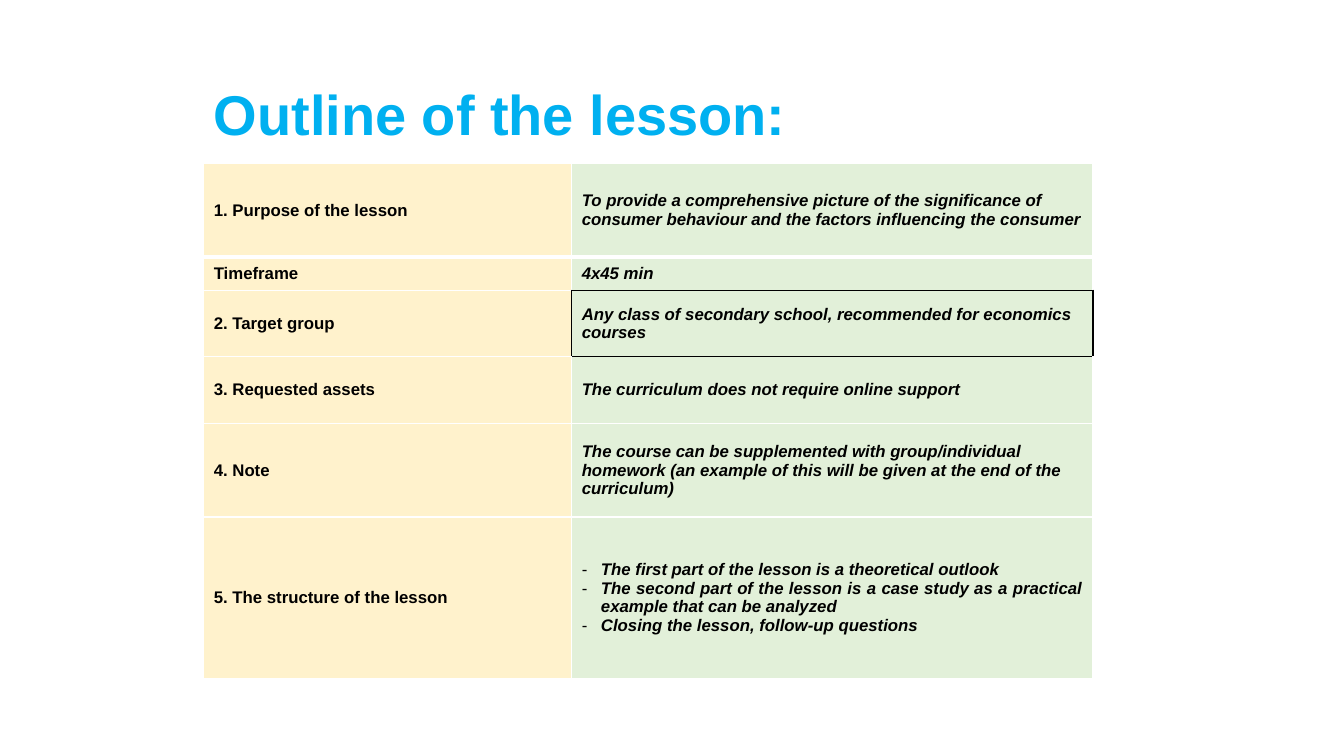
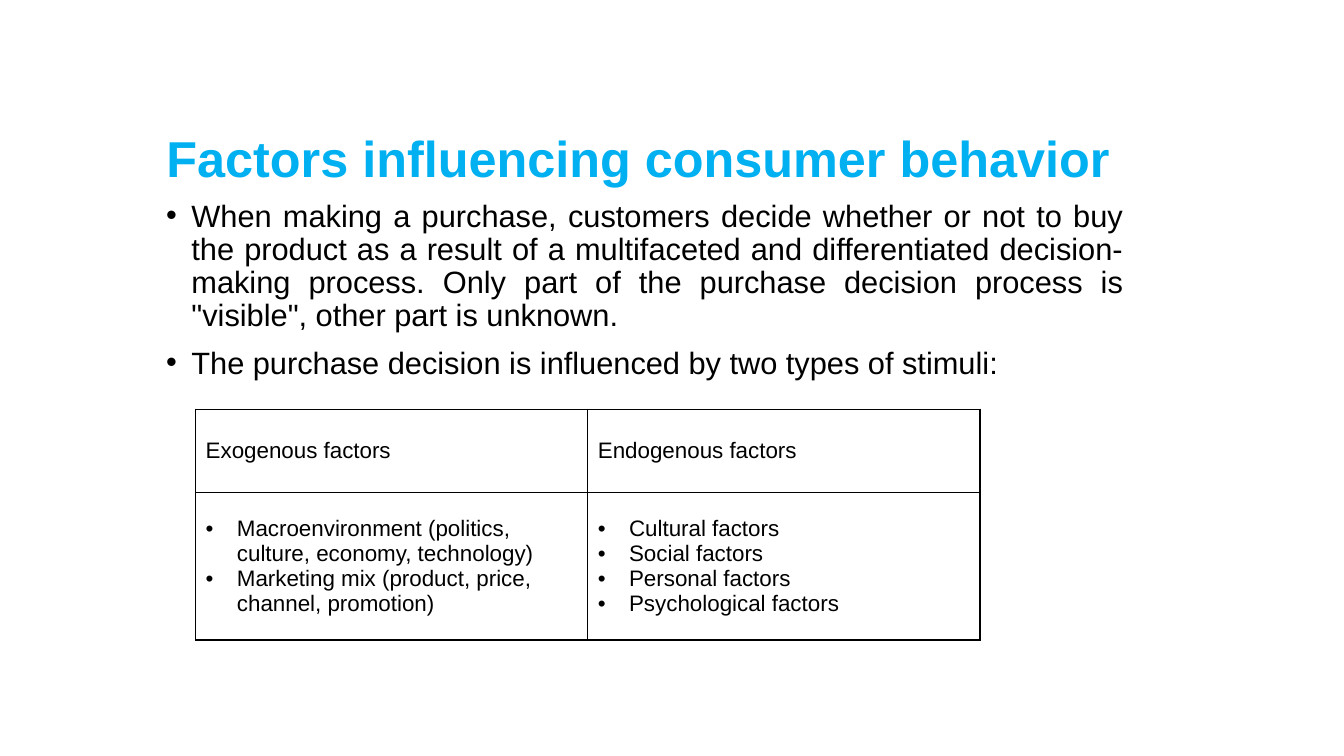
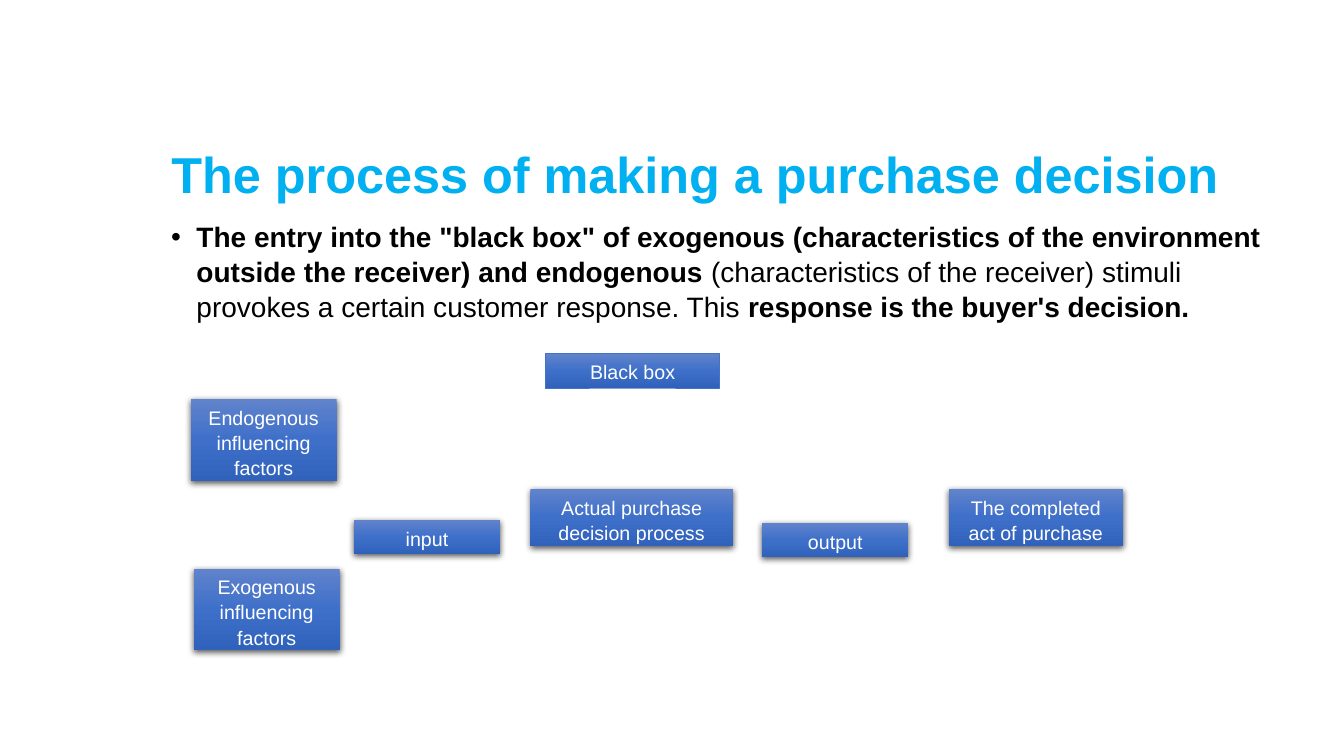
import pptx
import pptx.util
import pptx.dml.color
import pptx.enum.text
import pptx.enum.shapes
import pptx.oxml
import pptx.oxml.ns

Inches = pptx.util.Inches
Pt = pptx.util.Pt
ALIGN = pptx.enum.text.PP_ALIGN
ANCHOR = pptx.enum.text.MSO_ANCHOR
RECT = pptx.enum.shapes.MSO_SHAPE.RECTANGLE

HEX = {"title": "00B0F0", "text": "000000", "white": "FFFFFF",
       "label": "FFF2CC", "detail": "E2F0D9", "line": "4472C4"}
RAMP = [(0, "6183CB"), (50, "3E70CA"), (100, "3062BB")]
FONT = "Arial"

PLAN = [
    ("1. Purpose of the lesson", 0.93,
     ["To provide a comprehensive picture of the significance of consumer behaviour and the factors influencing the consumer"]),
    ("Timeframe", 0.33, ["4x45 min"]),
    ("2. Target group", 0.66,
     ["Any class of secondary school, recommended for economics courses"]),
    ("3. Requested assets", 0.66,
     ["The curriculum does not require online support"]),
    ("4. Note", 0.93,
     ["The course can be supplemented with group/individual homework (an example of this will be given at the end of the curriculum)"]),
    ("5. The structure of the lesson", 1.6,
     ["The first part of the lesson is a theoretical outlook",
      "The second part of the lesson is a case study as a practical example that can be analyzed",
      "Closing the lesson, follow-up questions"]),
]
FRAMED = (2, 1)

STIMULI = [
    "When making a purchase, customers decide whether or not to buy the product as a result of a multifaceted and differentiated decision-making process. Only part of the purchase decision process is \"visible\", other part is unknown.",
    "The purchase decision is influenced by two types of stimuli:",
]
FACTORS = [
    ("Exogenous factors",
     ["Macroenvironment (politics, culture, economy, technology)",
      "Marketing mix (product, price, channel, promotion)"]),
    ("Endogenous factors",
     ["Cultural factors", "Social factors", "Personal factors",
      "Psychological factors"]),
]

ENTRY = [
    ("The entry into the \"black box\" of exogenous (characteristics of the environment outside the receiver) and endogenous ", True),
    ("(characteristics of the receiver) stimuli provokes a certain customer response. This ", False),
    ("response is the buyer's decision.", True),
]
STEPS = [
    ("Endogenous influencing factors", 1.89, 3.96, 1.45, 0.81),
    ("Exogenous influencing factors", 1.92, 5.64, 1.45, 0.81),
    ("input", 3.51, 5.16, 1.45, 0.34),
    ("Actual purchase decision process", 5.26, 4.85, 2.01, 0.57),
    ("output", 7.56, 5.19, 1.45, 0.34),
    ("The completed act of purchase", 9.41, 4.85, 1.73, 0.57),
    ("Black box", 5.41, 3.51, 1.73, 0.34),
]


def rgb(name):
    return pptx.dml.color.RGBColor.from_string(HEX[name])


def put(item, **vals):
    for key, val in vals.items():
        setattr(item, key, val)


def node(body):
    start, rest = body.split(" ", 1)
    return pptx.oxml.parse_xml(f"<a:{start} {pptx.oxml.ns.nsdecls('a')} {rest}")


def write(frame, paras, size, color="text", bullet=None, indent=0, form=None, **font):
    for i, runs in enumerate(paras):
        para = frame.paragraphs[0] if i == 0 else frame.add_paragraph()
        if bullet:
            props = para._p.get_or_add_pPr()
            step = Inches(indent)
            props.set("marL", str(step))
            props.set("indent", str(-step))
            props.append(node(f'buFont typeface="{FONT}"/>'))
            props.append(node(f'buChar char="{bullet}"/>'))
        put(para, **(form or {}))
        for text, bold in [(runs, False)] if isinstance(runs, str) else runs:
            run = para.add_run()
            run.text = text
            put(run.font, **{"name": FONT, "size": Pt(size), "bold": bold, **font})
            run.font.color.rgb = rgb(color)


def start(deck, text, left, top, width, height, size=36, anchor=ANCHOR.TOP):
    slide = deck.slides.add_slide(deck.slide_layouts[5])
    title = slide.shapes.title
    put(title, left=Inches(left), top=Inches(top),
        width=Inches(width), height=Inches(height))
    put(title.text_frame, word_wrap=True, vertical_anchor=anchor,
        auto_size=pptx.enum.text.MSO_AUTO_SIZE.NONE)
    write(title.text_frame, [text], size, "title", bold=True,
          form={"alignment": ALIGN.LEFT, "line_spacing": 0.9})
    return slide


def prose(slide, paras, size, left, top, width, height, form):
    box = slide.shapes.add_textbox(*map(Inches, (left, top, width, height)))
    box.text_frame.word_wrap = True
    write(box.text_frame, paras, size, bullet="•", indent=0.25, form=form)
    for para in box.text_frame.paragraphs[1:]:
        para.space_before = Pt(10)


def grid(slide, left, top, cols, rows):
    area = map(Inches, (left, top, sum(cols), sum(rows)))
    table = slide.shapes.add_table(len(rows), len(cols), *area).table
    put(table, first_row=False, horz_banding=False)
    for col, width in zip(table.columns, cols):
        col.width = Inches(width)
    for row, height in zip(table.rows, rows):
        row.height = Inches(height)
    return table


def edge(cell, side, color, width=1):
    cell._tc.get_or_add_tcPr().append(node(
        f'ln{side} w="{Pt(width)}"><a:solidFill><a:srgbClr val="{HEX[color]}"/>'
        f'</a:solidFill></a:ln{side}>'))


def outline(deck):
    slide = start(deck, "Outline of the lesson:", 2.02, 0.89, 8.19, 0.55,
                  40, ANCHOR.MIDDLE)
    table = grid(slide, 2.02, 1.62, [3.65, 5.17], [row[1] for row in PLAN])
    near = {"L": (0, -1), "R": (0, 1), "T": (-1, 0), "B": (1, 0)}
    for r, (label, _, detail) in enumerate(PLAN):
        for c, paras in enumerate(([label], detail)):
            cell = table.cell(r, c)
            cell.vertical_anchor = ANCHOR.MIDDLE
            for side, (down, over) in near.items():
                dark = FRAMED in ((r, c), (r + down, c + over))
                edge(cell, side, "text" if dark else "white",
                     3 if (r, side) == (0, "B") else 1)
            cell.fill.solid()
            cell.fill.fore_color.rgb = rgb(("label", "detail")[c])
            many = len(paras) > 1
            write(cell.text_frame, paras, 12, bullet="-" if many else None,
                  indent=0.19, bold=True, italic=c == 1,
                  form={"alignment": ALIGN.JUSTIFY if many else ALIGN.LEFT})


def factors(deck):
    slide = start(deck, "Factors influencing consumer behavior",
                  1.55, 1.28, 9.69, 0.62)
    prose(slide, STIMULI, 22, 1.55, 1.94, 9.69, 2,
          {"alignment": ALIGN.JUSTIFY, "line_spacing": 0.9})
    table = grid(slide, 1.94, 4.06, [3.89, 3.89], [0.83, 1.46])
    for c, (head, items) in enumerate(FACTORS):
        for r, paras in enumerate(([head], items)):
            cell = table.cell(r, c)
            cell.vertical_anchor = ANCHOR.MIDDLE
            for side in "LRTB":
                edge(cell, side, "text")
            cell.fill.background()
            write(cell.text_frame, paras, 16, bullet="•" if r else None, indent=0.31)


def process(deck):
    slide = start(deck, "The process of making a purchase decision",
                  1.6, 1.44, 11.05, 0.62)
    prose(slide, [ENTRY], 20, 1.6, 2.12, 11.05, 1.15, {"line_spacing": 1.04})
    stops = "".join(f'<a:gs pos="{at * 1000}"><a:srgbClr val="{tint}"/></a:gs>'
                    for at, tint in RAMP)
    for text, *area in STEPS:
        box = slide.shapes.add_shape(RECT, *map(Inches, area))
        box.shadow.inherit = False
        props = box._element.spPr
        if text == "Black box":
            box.line.color.rgb = rgb("line")
            box.line.width = Pt(0.5)
        else:
            box.line.fill.background()
            props.find(pptx.oxml.ns.qn("a:effectLst")).append(node(
                f'outerShdw blurRad="{Pt(4.5)}" dist="{Pt(1.5)}" dir="5400000">'
                f'<a:srgbClr val="{HEX["text"]}"><a:alpha val="63000"/></a:srgbClr>'
                '</a:outerShdw>'))
        props.insert(2, node(f'gradFill rotWithShape="1"><a:gsLst>{stops}</a:gsLst>'
                             '<a:lin ang="5400000" scaled="0"/></a:gradFill>'))
        put(box.text_frame, word_wrap=True, vertical_anchor=ANCHOR.TOP)
        write(box.text_frame, [text], 14, "white",
              form={"alignment": ALIGN.CENTER, "line_spacing": 1.07})


def main():
    deck = pptx.Presentation()
    put(deck, slide_width=Inches(13.33), slide_height=Inches(7.5))
    for build in (outline, factors, process):
        build(deck)
    deck.save("out.pptx")


if __name__ == "__main__":
    main()
